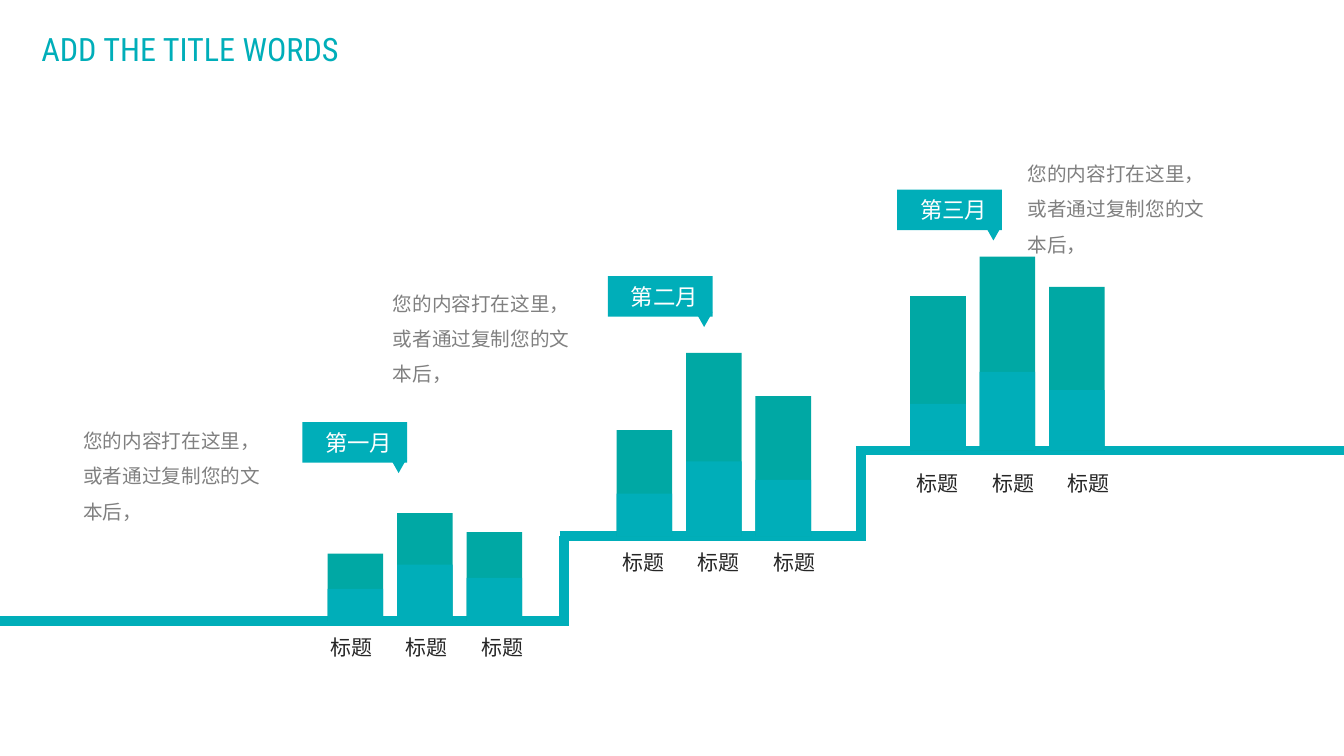
import pptx
import pptx.util
import pptx.dml.color
import pptx.enum.shapes
import pptx.enum.text
import pptx.oxml.ns
import lxml.etree

Cm = pptx.util.Cm
Pt = pptx.util.Pt
SHAPE = pptx.enum.shapes.MSO_SHAPE
ANCHOR = pptx.enum.text.MSO_ANCHOR
qn = pptx.oxml.ns.qn

# Content: lengths in centimetres, bars as (full height, front height)
TITLE = "ADD THE TITLE WORDS"
NOTE = "您的内容打在这里，或者通过复制您的文本后，"
LABEL = "标题"
MONTHS = [
    {"name": "第一月", "base": 15.65, "bars_left": 8.26,
     "bars": [(1.7, 0.81), (2.72, 1.42), (2.24, 1.09)],
     "labels": (8.13, 15.88), "flag": (7.62, 10.64), "note": (1.85, 10.39)},
    {"name": "第二月", "base": 13.51, "bars_left": 15.54,
     "bars": [(2.67, 1.07), (4.62, 1.88), (3.53, 1.42)],
     "labels": (15.49, 13.74), "flag": (15.32, 6.96), "note": (9.65, 6.93)},
    {"name": "第三月", "base": 11.35, "bars_left": 22.94,
     "bars": [(3.89, 1.17), (4.88, 1.98), (4.12, 1.52)],
     "labels": (22.91, 11.76), "flag": (22.61, 4.78), "note": (25.65, 3.66)},
]
RISERS = [14.22, 21.69]

# Format values
COLORS = {"accent": "00AEB9", "back": "00A8A4", "label": "262626",
          "note": "808080", "white": "FFFFFF"}
CJK, LATIN = "Noto Sans CJK SC", "Roboto Condensed"
SLIDE_WIDTH, SLIDE_HEIGHT = 33.87, 19.05
BAR_WIDTH, BAR_PITCH, LABEL_PITCH = 1.4, 1.75, 1.9
LINE_POINTS, LINE_HALF = 7, 0.12
LABEL_FRAME = {"margin_left": Cm(0.2), "margin_right": Cm(0.2),
               "margin_top": Cm(0.1), "margin_bottom": Cm(0.1),
               "word_wrap": False}
WRAP_FRAME = {"word_wrap": True, "vertical_anchor": ANCHOR.TOP}
TITLE_FRAME = {**WRAP_FRAME, "margin_left": Cm(0.23), "margin_right": Cm(0.23),
               "auto_size": pptx.enum.text.MSO_AUTO_SIZE.NONE}


def rgb(name):
    return pptx.dml.color.RGBColor.from_string(COLORS[name])


def write(box, text, size, color, frame_format, font=CJK, spacing=1.0):
    frame = box.text_frame
    for key, value in frame_format.items():
        setattr(frame, key, value)
    para = frame.paragraphs[0]
    para.alignment = pptx.enum.text.PP_ALIGN.LEFT
    para.line_spacing = spacing
    span = para.add_run()
    span.text = text
    span.font.color.rgb = rgb(color)
    for key, value in {"size": Pt(size), "name": font}.items():
        setattr(span.font, key, value)
    east_asian = lxml.etree.SubElement(span.font._element, qn("a:ea"))
    east_asian.set("typeface", font)


def add_text(page, left, top, width, height, *args, **kwargs):
    box = page.shapes.add_textbox(Cm(left), Cm(top), Cm(width), Cm(height))
    write(box, *args, **kwargs)


def add_block(page, kind, left, top, width, height, color):
    block = page.shapes.add_shape(kind, Cm(left), Cm(top), Cm(width), Cm(height))
    block.shadow.inherit = False
    block.fill.solid()
    block.fill.fore_color.rgb = rgb(color)
    block.line.fill.background()
    return block


def add_line(page, x1, y1, x2, y2):
    line = page.shapes.add_connector(
        pptx.enum.shapes.MSO_CONNECTOR.STRAIGHT, Cm(x1), Cm(y1), Cm(x2), Cm(y2))
    line.line.color.rgb = rgb("accent")
    line.line.width = Pt(LINE_POINTS)
    lxml.etree.SubElement(line._element.spPr, qn("a:effectLst"))


def add_staircase(page):
    bases = [month["base"] for month in MONTHS]
    starts = [0] + [x - LINE_HALF for x in RISERS]
    ends = [x + LINE_HALF for x in RISERS] + [SLIDE_WIDTH]
    for start, end, base in zip(starts, ends, bases):
        add_line(page, start, base, end, base)
    for x, lower, upper in zip(RISERS, bases, bases[1:]):
        add_line(page, x, lower + LINE_HALF, x, upper)


def add_month(page, month):
    # Bars standing on the step, with their labels below
    label_left, label_top = month["labels"]
    for index, heights in enumerate(month["bars"]):
        left = month["bars_left"] + index * BAR_PITCH
        for height, color in zip(heights, ("back", "accent")):
            add_block(page, SHAPE.RECTANGLE, left, month["base"] - height,
                      BAR_WIDTH, height, color)
        add_text(page, label_left + index * LABEL_PITCH, label_top, 1.47, 0.84,
                 LABEL, 15, "label", LABEL_FRAME)

    # Flag with its pointer
    left, top = month["flag"]
    add_block(page, SHAPE.RECTANGLE, left, top, 2.64, 1.02, "accent")
    pointer = add_block(page, SHAPE.ISOSCELES_TRIANGLE,
                        left + 2.21, top + 0.9, 0.43, 0.38, "accent")
    pointer.rotation = 180
    add_text(page, left + 0.33, top + 0.04, 2.59, 0.94,
             month["name"], 16, "white", WRAP_FRAME)

    # Note
    add_text(page, *month["note"], 5.4, 2.06, NOTE, 14, "note", WRAP_FRAME,
             spacing=1.5)


def main():
    deck = pptx.Presentation()
    deck.slide_width, deck.slide_height = Cm(SLIDE_WIDTH), Cm(SLIDE_HEIGHT)
    page = deck.slides.add_slide(deck.slide_layouts[5])

    # Title
    title = page.shapes.title
    place = {"left": 0.81, "top": 0.13, "width": 8.53, "height": 1.73}
    for key, value in place.items():
        setattr(title, key, Cm(value))
    write(title, TITLE, 23, "accent", TITLE_FRAME, font=LATIN, spacing=1.5)

    # Staircase of months
    add_staircase(page)
    for month in MONTHS:
        add_month(page, month)
    deck.save("out.pptx")


if __name__ == "__main__":
    main()
